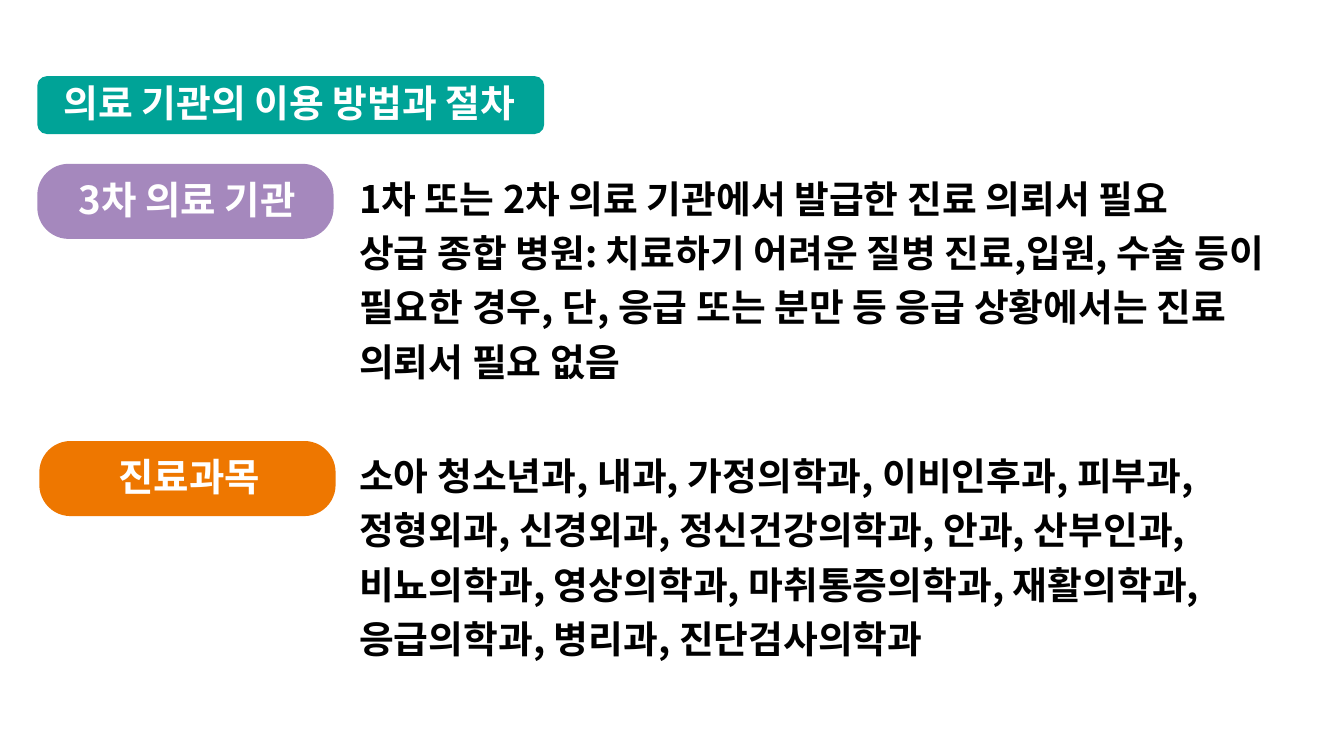
from pptx import Presentation
from pptx import util as u
from pptx.dml.color import RGBColor
from pptx.enum import shapes, text

FONT = "Noto Sans CJK KR"
LEFT, BODY_LEFT = 0.74, 7.03
LABEL_WIDTH, LABEL_HEIGHT = 5.88, 1.49
BODY_HEIGHT = 4.46

SECTIONS = [
    {
        "label": "3차 의료 기관", "left": LEFT, "top": 3.25,
        "fill": "A588BD", "body_width": 19.09,
        "body": [
            "1차 또는 2차 의료 기관에서 발급한 진료 의뢰서 필요",
            "상급 종합 병원: 치료하기 어려운 질병 진료,입원, 수술 등이 필요한 경우, "
            "단, 응급 또는 분만 등 응급 상황에서는 진료 의뢰서 필요 없음",
        ],
    },
    {
        "label": "진료과목", "left": LEFT + 0.04, "top": 8.75,
        "fill": "EE7700", "body_width": 18.3,
        "body": [
            "소아 청소년과, 내과, 가정의학과, 이비인후과, 피부과, 정형외과, "
            "신경외과, 정신건강의학과, 안과, 산부인과,",
            "비뇨의학과, 영상의학과, 마취통증의학과, 재활의학과, 응급의학과, "
            "병리과, 진단검사의학과",
        ],
    },
]


def colour(value):
    return RGBColor.from_string(value)


def add_panel(page, area, fill, corner):
    panel = page.shapes.add_shape(
        shapes.MSO_SHAPE.ROUNDED_RECTANGLE, *map(u.Inches, area))
    panel.adjustments[0] = corner
    panel.shadow.inherit = False
    panel.fill.solid()
    panel.fill.fore_color.rgb = colour(fill)
    panel.line.fill.background()


def style_span(span, size, ink):
    span.font.size = u.Pt(size)
    span.font.bold = True
    span.font.color.rgb = colour(ink)
    span.font.name = FONT


def keep_punctuation_inside(para):
    """Stop commas from hanging past the right margin."""
    para._p.get_or_add_pPr().set("hangingPunct", "0")


def add_text(page, area, lines, size, ink, align, spacing=None, inset=None):
    box = page.shapes.add_textbox(*map(u.Inches, area))
    frame = box.text_frame
    frame.text = "\n".join(lines)
    frame.word_wrap = True
    if inset is not None:
        frame.margin_left = frame.margin_right = u.Inches(inset)
        frame.margin_top = frame.margin_bottom = u.Inches(inset)
    for para in frame.paragraphs:
        para.alignment = align
        para.line_spacing = spacing
        keep_punctuation_inside(para)
        for span in para.runs:
            style_span(span, size, ink)
    return box


def add_title(page, title):
    add_panel(page, (LEFT, 1.51, 10.06, 1.15), "00A397", 0.167)
    box = add_text(page, (1.03, 1.61, 9.42, 0.95), [title], 54, "FFFFFF",
                   text.PP_ALIGN.CENTER, spacing=0.9, inset=0.06)
    box.text_frame.vertical_anchor = text.MSO_ANCHOR.MIDDLE
    box.text_frame.auto_size = text.MSO_AUTO_SIZE.SHAPE_TO_FIT_TEXT


def add_section(page, section):
    """Draw a coloured label with its description to the right."""
    left, top = section["left"], section["top"]
    add_panel(page, (left, top, LABEL_WIDTH, LABEL_HEIGHT),
              section["fill"], 0.417)
    add_text(page, (left + 0.41, top + 0.18, 5.13, 1.14), [section["label"]],
             55, "FFFFFF", text.PP_ALIGN.CENTER, inset=0.06)
    body = add_text(page, (BODY_LEFT, top, section["body_width"], BODY_HEIGHT),
                    section["body"], 54, "000000", text.PP_ALIGN.LEFT,
                    spacing=1.2)
    body.text_frame.auto_size = text.MSO_AUTO_SIZE.SHAPE_TO_FIT_TEXT


def main():
    deck = Presentation()
    deck.slide_width, deck.slide_height = u.Inches(26.67), u.Inches(15)
    page = deck.slides.add_slide(deck.slide_layouts[6])
    add_title(page, "의료 기관의 이용 방법과 절차")
    for section in SECTIONS:
        add_section(page, section)
    deck.save("out.pptx")


if __name__ == "__main__":
    main()
